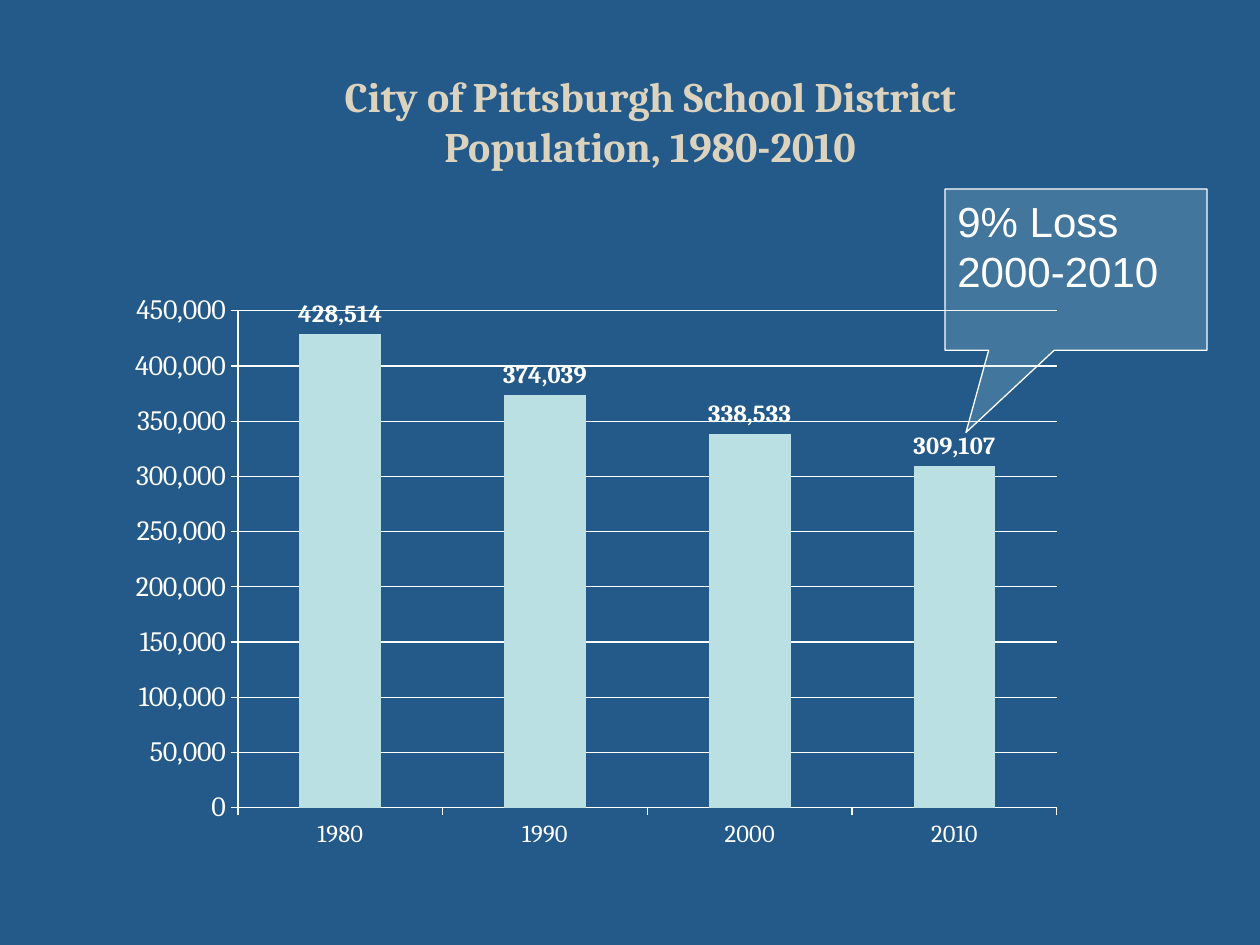
from dataclasses import dataclass

from pptx import Presentation
from pptx.chart.data import CategoryChartData
from pptx.dml.color import RGBColor
from pptx.enum.chart import XL_CHART_TYPE, XL_LABEL_POSITION, XL_TICK_MARK
from pptx.enum.shapes import MSO_SHAPE
from pptx.enum.text import MSO_ANCHOR, PP_ALIGN
from pptx.oxml.ns import qn
from pptx.util import Inches, Pt
from lxml.etree import SubElement


@dataclass(frozen=True)
class Theme:
    background = RGBColor.from_string("245A8A")
    bar = RGBColor.from_string("BBE0E3")
    title = RGBColor.from_string("DCD3BE")
    white = RGBColor.from_string("FFFFFF")
    serif = "Cambria"
    sans = "Arial"
    heading_size = Pt(24)
    value_size = Pt(16)
    label_size = Pt(14)
    chart_size = Pt(10)
    line_width = Pt(0.75)


theme = Theme()


def style_font(font, name, size, color, bold=False):
    font.name = name
    font.size = size
    font.bold = bold
    font.color.rgb = color


presentation = Presentation()
presentation.slide_width = Inches(10)
presentation.slide_height = Inches(7.5)
slide = presentation.slides.add_slide(presentation.slide_layouts[6])
slide.background.fill.solid()
slide.background.fill.fore_color.rgb = theme.background

# Population chart
chart_data = CategoryChartData(number_format="#,##0")
chart_data.categories = ["1980", "1990", "2000", "2010"]
chart_data.add_series("Population", [428514, 374039, 338533, 309107])
chart = slide.shapes.add_chart(
    XL_CHART_TYPE.COLUMN_CLUSTERED,
    Inches(0.92), Inches(2.25), Inches(7.62), Inches(4.58), chart_data,
).chart
chart.has_title = False
chart.has_legend = False
style_font(chart.font, theme.serif, theme.chart_size, theme.white)

plot = chart.plots[0]
plot.gap_width = 150
plot.vary_by_categories = False
bar_fill = plot.series[0].format.fill
bar_fill.solid()
bar_fill.fore_color.rgb = theme.bar

plot.has_data_labels = True
labels = plot.data_labels
labels.show_value = True
labels.number_format = "#,##0"
labels.number_format_is_linked = False
labels.position = XL_LABEL_POSITION.OUTSIDE_END
style_font(labels.font, theme.serif, theme.label_size, theme.white, bold=True)

# Axes and gridlines
value_axis = chart.value_axis
value_axis.minimum_scale = 0
value_axis.maximum_scale = 450000
value_axis.major_unit = 50000
value_axis.tick_labels.number_format = "#,##0"
value_axis.tick_labels.number_format_is_linked = False
value_axis.has_major_gridlines = True
for axis, size in ((chart.category_axis, theme.label_size), (value_axis, theme.value_size)):
    axis.major_tick_mark = XL_TICK_MARK.OUTSIDE
    style_font(axis.tick_labels.font, theme.serif, size, theme.white)
for element in (chart.category_axis, value_axis, value_axis.major_gridlines):
    element.format.line.color.rgb = theme.white
    element.format.line.width = theme.line_width

# Title
title = slide.shapes.add_textbox(Inches(0.66), Inches(0.42), Inches(9), Inches(0.67))
title_frame = title.text_frame
title_frame.word_wrap = True
title_frame.vertical_anchor = MSO_ANCHOR.TOP
title_frame.margin_top = Inches(0.14)
title_frame.text = "City of Pittsburgh School District\nPopulation, 1980-2010"
for paragraph in title_frame.paragraphs:
    paragraph.alignment = PP_ALIGN.CENTER
    style_font(paragraph.font, theme.serif, theme.heading_size, theme.title, bold=True)

# Callout pointing at the last bar
callout = slide.shapes.add_shape(
    MSO_SHAPE.RECTANGULAR_CALLOUT, Inches(7.5), Inches(1.5), Inches(2.08), Inches(1.28)
)
callout.shadow.inherit = False
callout.adjustments[0] = -0.42
callout.adjustments[1] = 1.01
callout.fill.solid()
callout.fill.fore_color.rgb = theme.bar
fill_color = callout.fill._xPr.find(qn("a:solidFill"))[0]
SubElement(fill_color, qn("a:alpha")).set("val", "21000")
callout.line.color.rgb = theme.white
callout.line.width = theme.line_width
callout_frame = callout.text_frame
callout_frame.word_wrap = True
callout_frame.vertical_anchor = MSO_ANCHOR.TOP
callout_frame.text = "9% Loss 2000-2010"
paragraph = callout_frame.paragraphs[0]
paragraph.alignment = PP_ALIGN.LEFT
style_font(paragraph.font, theme.sans, theme.heading_size, theme.white)

presentation.save("out.pptx")
